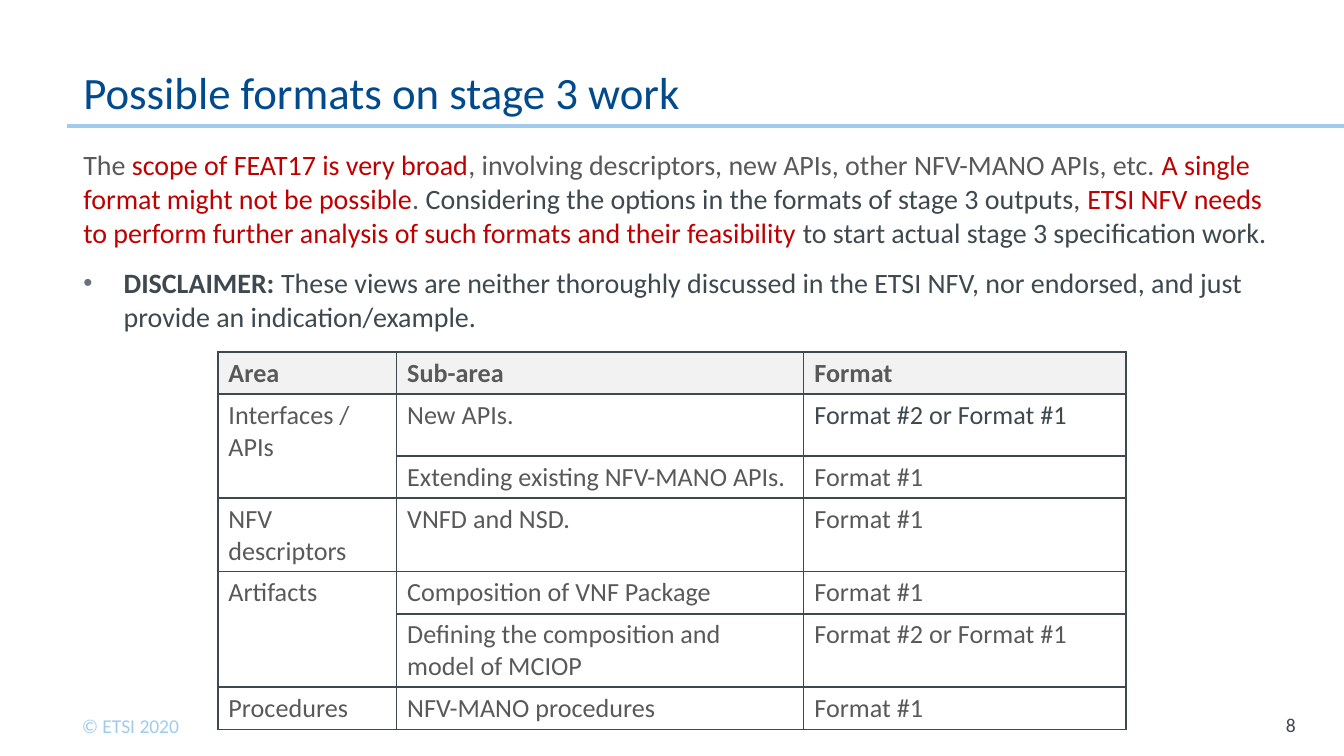
from lxml.etree import SubElement
from pptx import Presentation
from pptx.dml.color import RGBColor
from pptx.enum.shapes import MSO_CONNECTOR
from pptx.enum.text import MSO_ANCHOR, PP_ALIGN
from pptx.oxml.ns import qn
from pptx.util import Inches, Pt

FONT = "Calibri"
BLUE, SKY, DARK, GRAY = "004A8D", "A0CBED", "3E484F", "595959"
RED, PALE, STEEL = "C00000", "F2F2F2", "69747A"


def color(code):
    return RGBColor.from_string(code)


class Page:
    def __init__(self, deck):
        self.slide = deck.slides.add_slide(deck.slide_layouts[6])
        self.shapes = self.slide.shapes

    def style(self, run, size, code, bold=False):
        run.font.name = FONT
        run.font.size = Pt(size)
        run.font.bold = bold
        run.font.color.rgb = color(code)

    def pad(self, item, left, top, right, bottom):
        item.margin_left, item.margin_top = Inches(left), Inches(top)
        item.margin_right, item.margin_bottom = Inches(right), Inches(bottom)

    def rule(self, x1, y1, x2, y2, code, width):
        line = self.shapes.add_connector(
            MSO_CONNECTOR.STRAIGHT, Inches(x1), Inches(y1), Inches(x2), Inches(y2))
        line.line.color.rgb = color(code)
        line.line.width = Pt(width)
        SubElement(line._element.spPr, qn("a:effectLst"))

    def box(self, x, y, w, h, pads, anchor=MSO_ANCHOR.TOP, wrap=True):
        frame = self.shapes.add_textbox(
            Inches(x), Inches(y), Inches(w), Inches(h)).text_frame
        frame.word_wrap = wrap
        frame.vertical_anchor = anchor
        self.pad(frame, *pads)
        return frame

    def label(self, frame, text, size, code, align=PP_ALIGN.LEFT):
        frame.text = text
        para = frame.paragraphs[0]
        para.alignment = align
        self.style(para.runs[0], size, code)
        return para

    def rich(self, para, size, parts):
        for text, code, bold in parts:
            run = para.add_run()
            run.text = text
            self.style(run, size, code, bold)

    def bullet(self, para, indent, code, scale):
        props = para._p.get_or_add_pPr()
        props.set("marL", str(Inches(indent)))
        props.set("indent", str(-Inches(indent)))
        tint = SubElement(props, qn("a:buClr"))
        SubElement(tint, qn("a:srgbClr"), val=code)
        SubElement(props, qn("a:buSzPct"), val=str(scale * 1000))
        SubElement(props, qn("a:buFont"), typeface="Arial")
        SubElement(props, qn("a:buChar"), char="•")

    def border(self, cell, code, width):
        props = cell._tc.get_or_add_tcPr()
        for side in ("lnL", "lnR", "lnT", "lnB"):
            line = SubElement(props, qn("a:" + side), w=str(Pt(width)))
            fill = SubElement(line, qn("a:solidFill"))
            SubElement(fill, qn("a:srgbClr"), val=code)

    def table(self, x, y, cols, rows, data, merges, tints):
        grid = self.shapes.add_table(
            len(rows), len(cols), Inches(x), Inches(y),
            Inches(sum(cols)), Inches(sum(rows))).table
        for col, width in zip(grid.columns, cols):
            col.width = Inches(width)
        for row, height in zip(grid.rows, rows):
            row.height = Inches(height)
        for r, line in enumerate(data):
            for c, text in enumerate(line):
                cell = grid.cell(r, c)
                self.pad(cell, 0.08, 0.04, 0.08, 0.04)
                self.border(cell, DARK, 1)
                if r == 0:
                    cell.fill.solid()
                    cell.fill.fore_color.rgb = color(PALE)
                else:
                    cell.fill.background()
                cell.text_frame.text = text
                for run in cell.text_frame.paragraphs[0].runs:
                    self.style(run, 14, tints.get((r, c), GRAY), r == 0)
        for first, last in merges:
            grid.cell(first, 0).merge(grid.cell(last, 0))


def main():
    # Slide in 16:9
    deck = Presentation()
    deck.slide_width = Inches(10)
    deck.slide_height = Inches(10 * 9 / 16)
    page = Page(deck)
    wide = (0.12, 0.06, 0.12, 0.06)

    # Rule and footer
    page.rule(0.5, 0.94, 10, 0.94, SKY, 2.25)
    foot = page.box(0.51, 5.26, 1.01, 0.28, (0.1, 0.05, 0.1, 0.05), wrap=False)
    page.label(foot, "© ETSI 2020", 10.5, SKY)
    num = page.box(9.19, 5.24, 0.52, 0.3, (0, 0.04, 0.07, 0.04), MSO_ANCHOR.MIDDLE)
    page.label(num, "8", 10.5, DARK, PP_ALIGN.RIGHT)

    # Title
    title = page.box(0.5, 0.23, 7.81, 0.71, wide, MSO_ANCHOR.BOTTOM)
    para = page.label(title, "Possible formats on stage 3 work", 24, BLUE)
    para.line_spacing = Pt(22.5)

    # Body text
    body = page.box(0.5, 1.04, 9.21, 4.12, wide)
    page.rich(body.paragraphs[0], 15, [
        ("The ", GRAY, False),
        ("scope of FEAT17 is very broad", RED, False),
        (", involving descriptors, new APIs, other NFV-MANO APIs, etc. ", GRAY, False),
        ("A single format might not be possible", RED, False),
        (". ", GRAY, False),
        ("Considering the options in the formats of stage 3 outputs, ", DARK, False),
        ("ETSI NFV needs to perform further analysis of such formats "
         "and their feasibility", RED, False),
        (" to start actual stage 3 specification work.", DARK, False),
    ])
    note = body.add_paragraph()
    page.bullet(note, 0.3, STEEL, 93)
    note.space_before = Pt(9)
    page.rich(note, 15, [
        ("DISCLAIMER: ", DARK, True),
        ("These views are neither thoroughly discussed in the ETSI NFV, "
         "nor endorsed, and just provide an indication/example.", DARK, False),
    ])

    # Format table
    one, both = "Format #1", "Format #2 or Format #1"
    data = [
        ("Area", "Sub-area", "Format"),
        ("Interfaces / APIs", "New APIs.", both),
        ("", "Extending existing NFV-MANO APIs.", one),
        ("NFV descriptors", "VNFD and NSD.", one),
        ("Artifacts", "Composition of VNF Package", one),
        ("", "Defining the composition and model of MCIOP", both),
        ("Procedures", "NFV-MANO procedures", one),
    ]
    page.table(1.62, 2.62, [1.33, 3.03, 2.4],
               [0.3, 0.46, 0.3, 0.53, 0.3, 0.53, 0.3],
               data, [(1, 2), (4, 5)], {(1, 2): DARK})

    deck.save("out.pptx")


if __name__ == "__main__":
    main()
